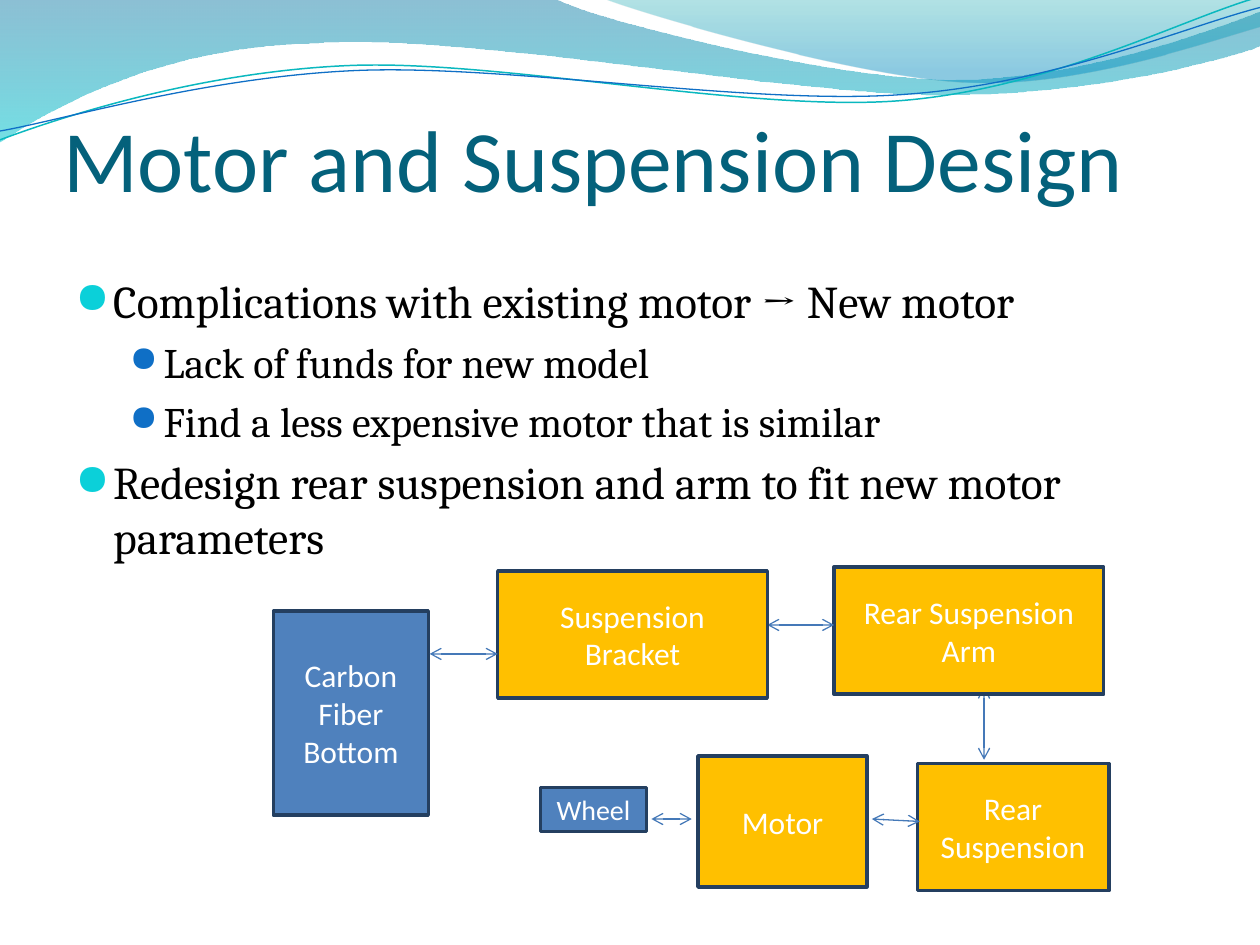
import math
from typing import NamedTuple

from lxml import etree
from pptx import Presentation
from pptx import util as u
from pptx.dml.color import RGBColor
from pptx.enum import shapes, text
from pptx.oxml.ns import qn

GOLD, BLUE, EDGE, LINK = "FFC000", "4F81BD", "243F60", "4579B8"
TURN = 357.3


class Wave(NamedTuple):
    start: tuple
    steps: list  # 2 numbers: straight line; 6 numbers: Bezier curve
    stops: tuple = ()  # position, colour, opacity in percent
    color: str = ""
    width: float = 0
    pivot: tuple = ()  # centre of a turned wave


class Block(NamedTuple):
    label: str
    box: tuple
    fill: str = GOLD
    size: int = 18


class Link(NamedTuple):
    start: tuple
    end: tuple


class Bullet(NamedTuple):
    label: str
    level: int = 0


class Style(NamedTuple):
    size: int
    left: float
    hang: float
    color: str
    scale: int


WAVES = [
    Wave((0, 0), [(4.4, -0.01), (4.76, 0.17, 6.64, 0.63, 7.58, 0.63),
                  (8.53, 0.63, 9.58, 0.26, 10, 0.09), (10.01, 0.36),
                  (9.83, 0.44, 8.7, 0.76, 7.46, 0.75),
                  (6.22, 0.75, 3.82, 0.28, 2.57, 0.34),
                  (1.29, 0.36, 0.46, 0.83, -0.01, 1.13)],
         stops=((0, "0074A1", 45), (100, "00C6CF", 55))),
    Wave((4.79, -0.01), [(5.09, 0.11, 6.82, 0.62, 7.69, 0.65),
                         (8.56, 0.69, 9.61, 0.32, 10, 0.21), (10, 0)],
         stops=((0, "00A1A9", 30), (80, "008BBF", 45))),
    Wave((0, 1.11), [(0.48, 0.93, 1.58, 0.57, 2.77, 0.52),
                     (3.95, 0.47, 5.93, 0.89, 7.13, 0.8),
                     (8.33, 0.71, 9.38, 0.15, 9.98, -0.02)],
         color="0AB8BF", width=0.85, pivot=(4.99, 0.58)),
    Wave((0, 1.04), [(0.47, 0.96, 1.64, 0.61, 2.83, 0.56),
                     (4.03, 0.51, 5.97, 0.84, 7.17, 0.75),
                     (8.36, 0.67, 9.41, 0.21, 10, 0.06)],
         color="0F6FC6", width=0.75, pivot=(5, 0.59)),
]

BULLETS = [
    Bullet("Complications with existing motor → New motor"),
    Bullet("Lack of funds for new model", 1),
    Bullet("Find a less expensive motor that is similar", 1),
    Bullet("Redesign rear suspension and arm to fit new motor parameters"),
]
STYLES = [Style(26, 0.3, 0.3, "0BD0D9", 95), Style(24, 0.7, 0.27, "0F6FC6", 85)]

# Back to front: some blocks cover the arrow tips
PARTS = [
    Block("Motor", (5.54, 6, 1.34, 1.04)),
    Block("Wheel", (4.29, 6.25, 0.84, 0.35), BLUE, 16),
    Link((5.17, 6.5), (5.49, 6.5)),
    Block("Rear Suspension", (7.28, 6.06, 1.52, 1.01)),
    Link((6.92, 6.5), (7.3, 6.52)),
    Block("Carbon Fiber Bottom", (2.17, 4.85, 1.23, 1.62), BLUE),
    Link((7.81, 6.03), (7.81, 5.45)),
    Block("Rear Suspension Arm", (6.62, 4.5, 2.14, 1.01)),
    Link((6.09, 4.96), (6.62, 4.96)),
    Block("Suspension Bracket", (3.95, 4.53, 2.14, 1.01)),
    Link((3.41, 5.19), (3.95, 5.19)),
]


def rgb(code: str) -> RGBColor:
    return RGBColor.from_string(code)


def inches(vals) -> list:
    return [u.Inches(v) for v in vals]


def apply(obj, vals: dict) -> None:
    for name, val in vals.items():
        setattr(obj, name, val)


def set_font(font, face: str, size: float, color: str) -> None:
    apply(font, {"name": face, "size": u.Pt(size)})
    font.color.rgb = rgb(color)


def set_line(line, color: str, width: float) -> None:
    line.color.rgb = rgb(color)
    line.width = u.Pt(width)


def unturn(point: tuple, pivot: tuple) -> tuple:
    """The place of a point before the wave is turned."""
    spot = complex(*point) - complex(*pivot)
    spot *= complex(math.cos(math.radians(TURN)), -math.sin(math.radians(TURN)))
    return spot.real + pivot[0], spot.imag + pivot[1]


def bend(shape, steps: list) -> None:
    """Join the three line segments of each curve into one Bezier."""
    trail = shape.element.find(".//" + qn("a:path"))
    nodes = iter(trail.findall(qn("a:lnTo")))
    for step in steps:
        group = [next(nodes) for _ in range(len(step) // 2)]
        if len(group) == 3:
            curve = etree.Element(qn("a:cubicBezTo"))
            trail.replace(group[0], curve)
            for node in group:
                curve.append(node[0])
            for node in group[1:]:
                trail.remove(node)


def draw_wave(slide, wave: Wave) -> None:
    pts = [wave.start] + [s[i:i + 2] for s in wave.steps
                          for i in range(0, len(s), 2)]
    if wave.pivot:
        pts = [unturn(p, wave.pivot) for p in pts]
    pts = [inches(p) for p in pts]
    pen = slide.shapes.build_freeform(*pts[0])
    pen.add_line_segments(pts[1:], close=bool(wave.stops))
    shape = pen.convert_to_shape()
    bend(shape, wave.steps)
    shape.shadow.inherit = False
    if wave.pivot:
        shape.rotation = TURN
        shape.fill.background()
        set_line(shape.line, wave.color, wave.width)
        return
    shape.line.fill.background()
    shape.fill.gradient()
    shape.fill.gradient_angle = 270
    for stop, (pos, color, _) in zip(shape.fill.gradient_stops, wave.stops):
        stop.position = pos / 100
        stop.color.rgb = rgb(color)
    tints = shape.element.spPr.iter(qn("a:srgbClr"))
    for tint, (_, _, alpha) in zip(tints, wave.stops):
        etree.SubElement(tint, qn("a:alpha"), val=str(alpha * 1000))


def draw_block(slide, block: Block) -> None:
    shape = slide.shapes.add_shape(shapes.MSO_SHAPE.RECTANGLE, *inches(block.box))
    shape.shadow.inherit = False
    shape.fill.solid()
    shape.fill.fore_color.rgb = rgb(block.fill)
    set_line(shape.line, EDGE, 2)
    frame = shape.text_frame
    apply(frame, {"text": block.label, "word_wrap": True,
                  "vertical_anchor": text.MSO_ANCHOR.MIDDLE})
    para = frame.paragraphs[0]
    para.alignment = text.PP_ALIGN.CENTER
    set_font(para.runs[0].font, "Calibri", block.size, "FFFFFF")


def draw_link(slide, link: Link) -> None:
    line = slide.shapes.add_connector(shapes.MSO_CONNECTOR.STRAIGHT,
                                      *inches(link.start + link.end))
    set_line(line.line, LINK, 0.75)
    props = line.element.spPr
    for tag in ("a:headEnd", "a:tailEnd"):
        etree.SubElement(props.find(qn("a:ln")), qn(tag), type="arrow")
    etree.SubElement(props, qn("a:effectLst"))


def draw_title(slide, label: str) -> None:
    title = slide.shapes.title
    apply(title, dict(zip(("left", "top", "width", "height"),
                          inches((0.5, 0.42, 9, 1.25)))))
    frame = title.text_frame
    apply(frame, {"text": label, "word_wrap": True,
                  "auto_size": text.MSO_AUTO_SIZE.NONE,
                  "vertical_anchor": text.MSO_ANCHOR.BOTTOM,
                  "margin_left": 0, "margin_right": 0,
                  "margin_top": u.Inches(0.05), "margin_bottom": 0})
    para = frame.paragraphs[0]
    para.alignment = text.PP_ALIGN.LEFT
    set_font(para.runs[0].font, "Calibri", 50, "04617B")


def draw_list(slide, bullets: list) -> None:
    frame = slide.shapes.add_textbox(*inches((0.5, 2.12, 9, 4.8))).text_frame
    frame.word_wrap = True
    for i, item in enumerate(bullets):
        para = frame.add_paragraph() if i else frame.paragraphs[0]
        style = STYLES[item.level]
        apply(para, {"text": item.label, "level": item.level})
        set_font(para.runs[0].font, "Cambria", style.size, "000000")
        # Relative spacing and a hanging bullet
        props = para._p.get_or_add_pPr()
        props.set("marL", str(u.Inches(style.left)))
        props.set("indent", str(-u.Inches(style.hang)))
        gap = etree.SubElement(props, qn("a:spcBef"))
        etree.SubElement(gap, qn("a:spcPct"), val="20000")
        tint = etree.SubElement(props, qn("a:buClr"))
        etree.SubElement(tint, qn("a:srgbClr"), val=style.color)
        etree.SubElement(props, qn("a:buSzPct"), val=str(style.scale * 1000))
        etree.SubElement(props, qn("a:buFont"), typeface="OpenSymbol")
        etree.SubElement(props, qn("a:buChar"), char="●")


def main() -> None:
    deck = Presentation()
    apply(deck, {"slide_width": u.Inches(10), "slide_height": u.Inches(7.5)})
    slide = deck.slides.add_slide(deck.slide_layouts[5])
    for wave in WAVES:
        draw_wave(slide, wave)
    draw_title(slide, "Motor and Suspension Design")
    draw_list(slide, BULLETS)
    # Block diagram
    for part in PARTS:
        (draw_block if isinstance(part, Block) else draw_link)(slide, part)
    deck.save("out.pptx")


if __name__ == "__main__":
    main()
